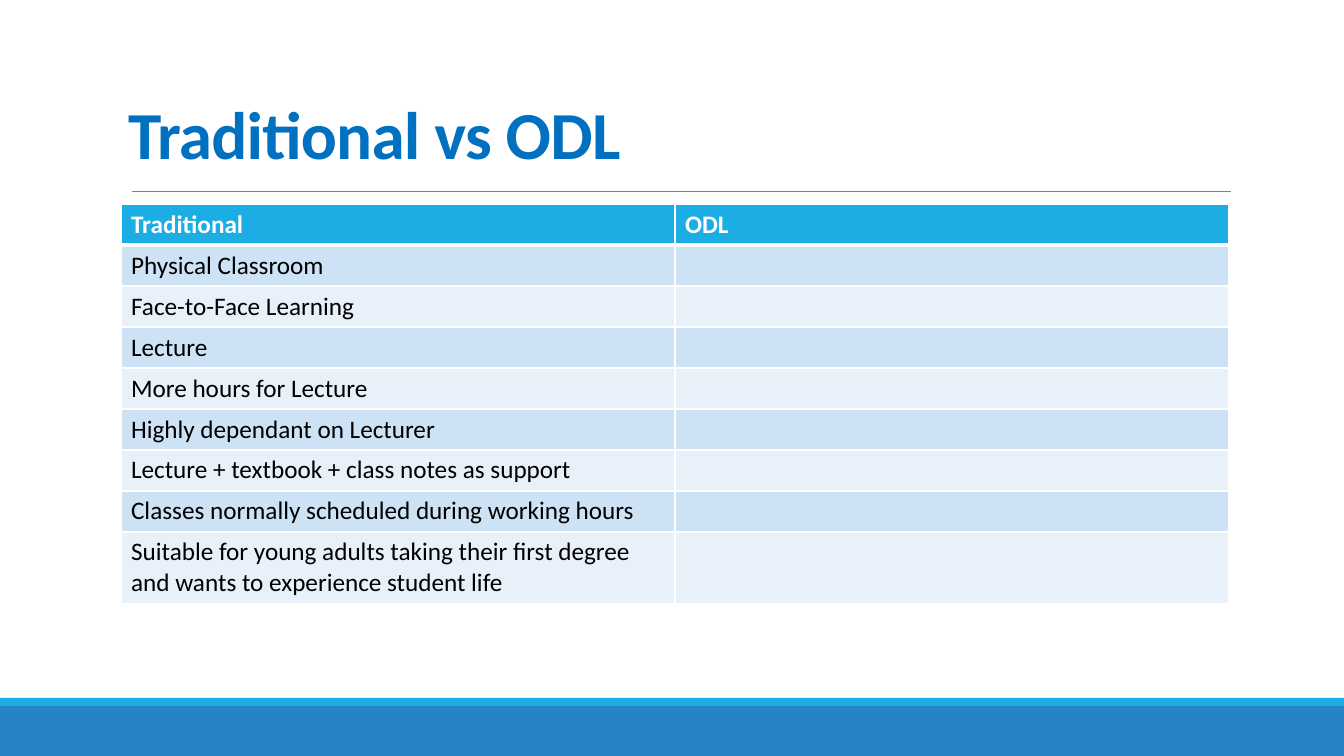
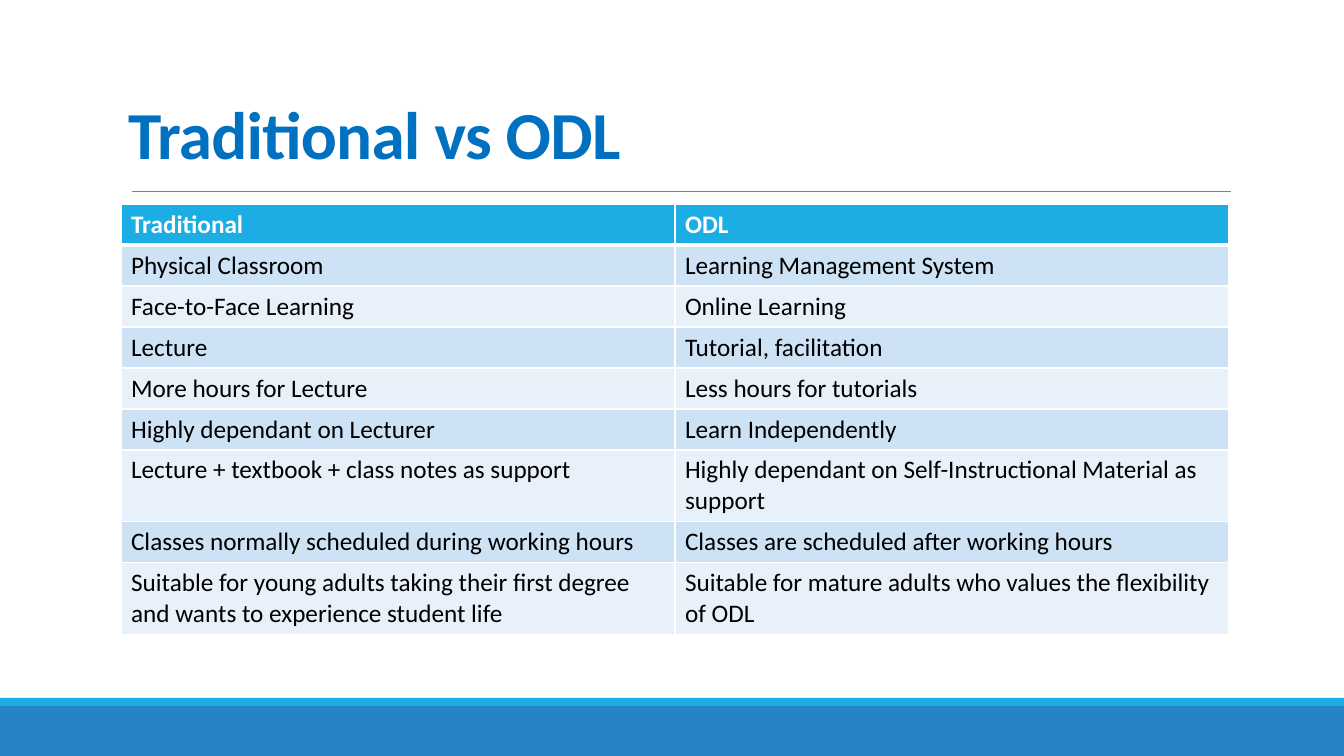
import dataclasses
from typing import Any

import lxml.etree
import pptx
import pptx.dml.color
import pptx.enum.shapes
import pptx.enum.text
import pptx.oxml.ns
import pptx.util

SLIDE_WIDTH, SLIDE_HEIGHT = 1344, 756
EMU_PER_PX = 12192000 / SLIDE_WIDTH

SKY, OCEAN, RULE_GREY, TITLE_BLUE = "1CADE4", "2683C6", "808080", "0070C0"
WHITE, BLACK = "FFFFFF", "000000"
ROW_TINTS = ("CDE3F5", "E8F1FA")
FONT = "Calibri"

TITLE_FORMAT = {"name": FONT, "size": pptx.util.Pt(48), "bold": True}
HEADING_FORMAT = {"name": FONT, "size": pptx.util.Pt(18), "bold": True}
ENTRY_FORMAT = {**HEADING_FORMAT, "bold": False}
TITLE_FRAME = {
    "word_wrap": True,
    "auto_size": pptx.enum.text.MSO_AUTO_SIZE.NONE,
    "vertical_anchor": pptx.enum.text.MSO_ANCHOR.BOTTOM,
}
TITLE_PARAGRAPH = {"line_spacing": 0.85, "alignment": pptx.enum.text.PP_ALIGN.LEFT}
TABLE_OPTIONS = {"first_row": True, "horz_banding": False}


@dataclasses.dataclass(frozen=True)
class Box:
    left: int
    top: int
    width: int
    height: int

    def emu(self) -> tuple[int, ...]:
        return tuple(px(length) for length in dataclasses.astuple(self))


@dataclasses.dataclass(frozen=True)
class Band:
    box: Box
    colour: str


@dataclasses.dataclass(frozen=True)
class Comparison:
    traditional: str
    odl: str


TITLE_BOX = Box(118, 1, 1109, 177)
BANDS = (
    Band(Box(0, 706, SLIDE_WIDTH, 50), OCEAN),
    Band(Box(0, 698, SLIDE_WIDTH, 8), SKY),
)
RULE_LEFT, RULE_RIGHT, RULE_TOP = 132, 1231, 191
TABLE_LEFT, TABLE_TOP, COLUMN_WIDTH, ROW_HEIGHT = 121, 204, 554, 41

HEADING = Comparison("Traditional", "ODL")
COMPARISONS = (
    Comparison("Physical Classroom", "Learning Management System"),
    Comparison("Face-to-Face Learning", "Online Learning"),
    Comparison("Lecture", "Tutorial, facilitation"),
    Comparison("More hours for Lecture", "Less hours for tutorials"),
    Comparison("Highly dependant on Lecturer", "Learn Independently"),
    Comparison(
        "Lecture + textbook + class notes as support",
        "Highly dependant on Self-Instructional Material as support",
    ),
    Comparison(
        "Classes normally scheduled during working hours",
        "Classes are scheduled after working hours",
    ),
    Comparison(
        "Suitable for young adults taking their first degree and wants to experience student life",
        "Suitable for mature adults who values the flexibility of ODL",
    ),
)


def px(length: int) -> int:
    return round(length * EMU_PER_PX)


def rgb(colour: str) -> pptx.dml.color.RGBColor:
    return pptx.dml.color.RGBColor.from_string(colour)


def apply(target: Any, values: dict[str, Any]) -> None:
    for attribute, value in values.items():
        setattr(target, attribute, value)


def paint(fill: Any, colour: str) -> None:
    fill.solid()
    fill.fore_color.rgb = rgb(colour)


def write(paragraph: Any, text: str, font_format: dict[str, Any], colour: str) -> Any:
    run = paragraph.add_run()
    run.text = text
    apply(run.font, font_format)
    run.font.color.rgb = rgb(colour)
    return run


def draw_band(slide: Any, band: Band) -> None:
    strip = slide.shapes.add_shape(
        pptx.enum.shapes.MSO_SHAPE.RECTANGLE, *band.box.emu()
    )
    strip.shadow.inherit = False
    paint(strip.fill, band.colour)
    strip.line.fill.background()


def draw_rule(slide: Any) -> None:
    rule = slide.shapes.add_connector(
        pptx.enum.shapes.MSO_CONNECTOR.STRAIGHT,
        px(RULE_LEFT), px(RULE_TOP), px(RULE_RIGHT), px(RULE_TOP),
    )
    rule.line.color.rgb = rgb(RULE_GREY)
    rule.line.width = pptx.util.Pt(0.5)
    lxml.etree.SubElement(rule._element.spPr, pptx.oxml.ns.qn("a:effectLst"))


def draw_title(slide: Any, text: str) -> None:
    title = slide.shapes.title
    apply(title, dict(zip(("left", "top", "width", "height"), TITLE_BOX.emu())))
    apply(title.text_frame, TITLE_FRAME)
    paragraph = title.text_frame.paragraphs[0]
    apply(paragraph, TITLE_PARAGRAPH)
    run = write(paragraph, text, TITLE_FORMAT, TITLE_BLUE)
    run._r.get_or_add_rPr().set("spc", "-50")


def draw_borders(cell: Any, top: int, bottom: int) -> None:
    properties = cell._tc.get_or_add_tcPr()
    for side, points in {"L": 1, "R": 1, "T": top, "B": bottom}.items():
        border = lxml.etree.SubElement(
            properties, pptx.oxml.ns.qn(f"a:ln{side}"), w=str(pptx.util.Pt(points))
        )
        fill = lxml.etree.SubElement(border, pptx.oxml.ns.qn("a:solidFill"))
        lxml.etree.SubElement(fill, pptx.oxml.ns.qn("a:srgbClr"), val=WHITE)


def draw_table(slide: Any, show_odl: bool) -> None:
    rows = (HEADING, *COMPARISONS)
    box = Box(TABLE_LEFT, TABLE_TOP, 2 * COLUMN_WIDTH, len(rows) * ROW_HEIGHT)
    table = slide.shapes.add_table(len(rows), 2, *box.emu()).table
    apply(table, TABLE_OPTIONS)
    for index, row in enumerate(rows):
        is_heading = index == 0
        tint = SKY if is_heading else ROW_TINTS[(index - 1) % 2]
        font_format = HEADING_FORMAT if is_heading else ENTRY_FORMAT
        ink = WHITE if is_heading else BLACK
        odl = row.odl if is_heading or show_odl else ""
        for column, text in enumerate((row.traditional, odl)):
            cell = table.cell(index, column)
            draw_borders(cell, 3 if index == 1 else 1, 3 if is_heading else 1)
            paint(cell.fill, tint)
            if text:
                write(cell.text_frame.paragraphs[0], text, font_format, ink)


def add_comparison_slide(deck: Any, show_odl: bool) -> None:
    slide = deck.slides.add_slide(deck.slide_layouts[5])
    paint(slide.background.fill, WHITE)
    for band in BANDS:
        draw_band(slide, band)
    draw_rule(slide)
    draw_title(slide, "Traditional vs ODL")
    draw_table(slide, show_odl)


def main() -> None:
    deck = pptx.Presentation()
    deck.slide_width, deck.slide_height = px(SLIDE_WIDTH), px(SLIDE_HEIGHT)
    for show_odl in (False, True):
        add_comparison_slide(deck, show_odl)
    deck.save("out.pptx")


if __name__ == "__main__":
    main()
